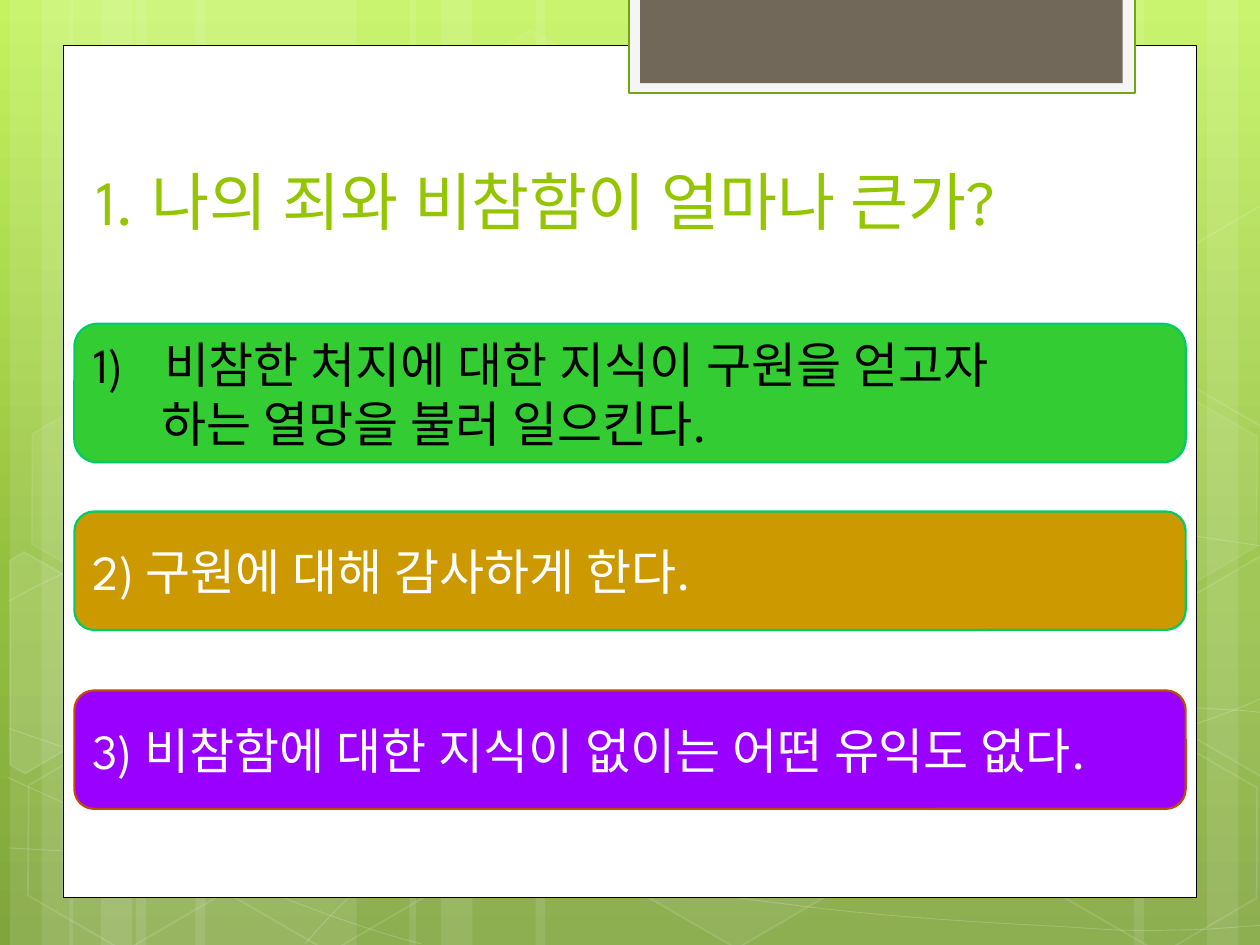
from copy import deepcopy

from pptx import Presentation
from pptx.dml.color import RGBColor
from pptx.enum.shapes import MSO_SHAPE as Preset
from pptx.enum.text import MSO_ANCHOR as Anchor, PP_ALIGN as Align
from pptx.oxml.ns import qn
from pptx.util import Inches, Pt
from lxml.etree import SubElement

COLORS = {
    "sky": "C3F35F", "meadow": "93BF3F", "moss": "81A53E",
    "white": "FFFFFF", "black": "000000", "lime": "94C600",
    "tab": "F5F5F5", "tab edge": "74A510", "tab core": "71685A",
    "green": "33CC33", "mint": "00CC66", "ochre": "CC9900",
    "violet": "9900FF", "rust": "BF4D00",
}
FONT = "League Spartan"

presentation = Presentation()
presentation.slide_width, presentation.slide_height = Inches(10), Inches(7.5)
slide = presentation.slides.add_slide(presentation.slide_layouts[6])
shapes = slide.shapes
CELL = presentation.slide_width // 10  # square grid: 10 columns by 7.5 rows


def paint(shape, fill=None, fill_alpha=100, line=None, width=1, line_alpha=100):
    """Fill and outline a shape; alphas are percentages of opacity."""
    shape.shadow.inherit = False
    shape.line.width = Pt(width)
    properties = shape.element.spPr
    for target, holder, color, alpha in (
            (shape.fill, properties, fill, fill_alpha),
            (shape.line.fill, properties.find(qn("a:ln")), line, line_alpha)):
        if color is None:
            target.background()
            continue
        target.solid()
        target.fore_color.rgb = RGBColor.from_string(COLORS[color])
        if alpha < 100:
            tint = holder.find(qn("a:solidFill"))[0]
            SubElement(tint, qn("a:alpha"), val=str(alpha * 1000))


def outline(points, close):
    """Add a freeform through points measured in grid cells."""
    corners = [(round(x * CELL), round(y * CELL)) for x, y in points]
    builder = shapes.build_freeform(*corners[0])
    builder.add_line_segments(corners[1:], close=close)
    return builder.convert_to_shape()


# Background gradient
background = slide.background.fill
background.gradient()
background.gradient_angle = 270
stop_list = slide.element.find(".//" + qn("a:gsLst"))
stop_list.append(deepcopy(stop_list[-1]))
for stop, color, position in zip(background.gradient_stops,
                                 ("sky", "meadow", "moss"), (0, 0.62, 1)):
    stop.color.rgb = RGBColor.from_string(COLORS[color])
    stop.position = position

# Translucent vertical stripes
for left, width in ((1.08, 1.75), (0.08, 0.5), (0.33, 0.83), (1.55, 1.75),
                    (0.55, 0.5), (0.8, 0.83), (7.33, 1.75), (9.58, 0.5),
                    (9, 0.83), (4.25, 3.08), (3.25, 0.5), (3.5, 0.83)):
    stripe = shapes.add_shape(Preset.RECTANGLE, round(left * CELL), 0,
                              round(width * CELL), presentation.slide_height)
    paint(stripe, "white", 10)

# Sweeping curves: a start point, then cubic segments (two numbers: a straight one)
curves = [
    [(0.07, 6.73), (0.61, 6.76, 1.15, 6.79, 1.9, 6.78), (2.65, 6.77, 3.58, 6.75, 4.58, 6.65),
     (5.58, 6.55, 7, 6.36, 7.92, 6.17), (8.83, 5.98, 9.77, 5.68, 10.07, 5.51)],
    [(0.07, 4.77), (0.36, 4.61, 0.65, 4.46, 1.21, 4.31), (1.78, 4.16, 2.59, 3.94, 3.47, 3.87),
     (4.36, 3.8, 5.44, 3.79, 6.54, 3.87), (7.64, 3.95, 9.47, 4.26, 10.07, 4.34)],
    [(0.06, 6.17), (1.27, 6.72, 2.47, 7.27, 3.34, 7.49)],
    [(0.07, 5.78), (0.38, 5.89, 0.7, 6, 1.28, 6.16), (1.86, 6.31, 2.73, 6.56, 3.57, 6.73),
     (4.4, 6.9, 5.45, 7.08, 6.28, 7.18), (7.11, 7.29, 8, 7.33, 8.53, 7.36),
     (9.05, 7.4, 9.19, 7.38, 9.45, 7.38), (9.71, 7.37, 9.89, 7.35, 10.07, 7.34)],
    [(2.42, 7.49), (2.6, 7.29, 2.78, 7.09, 3.02, 6.91), (3.26, 6.73, 3.6, 6.53, 3.88, 6.39),
     (4.16, 6.25, 4.33, 6.19, 4.7, 6.09), (5.06, 5.99, 5.73, 5.85, 6.08, 5.78),
     (6.44, 5.71, 6.49, 5.71, 6.8, 5.69), (7.11, 5.66, 7.6, 5.63, 7.94, 5.62),
     (8.29, 5.61, 8.86, 5.62, 8.86, 5.62), (9.53, 5.62),
     (9.71, 5.63, 9.88, 5.64, 9.97, 5.65), (10.06, 5.66, 10.03, 5.65, 10.06, 5.66)],
]
for segments in curves:
    numbers = [number for segment in segments for number in segment]
    curve = outline(list(zip(numbers[::2], numbers[1::2])), close=False)
    lines = iter(curve.element.findall(".//" + qn("a:lnTo")))
    for segment in segments[1:]:
        first, *others = [next(lines) for _ in segment[::2]]
        if others:  # merge three straight steps into one cubic step
            cubic = first.makeelement(qn("a:cubicBezTo"))
            first.addprevious(cubic)
            for step in (first, *others):
                cubic.append(step[0])
                step.getparent().remove(step)
    paint(curve, line="white", width=0.5, line_alpha=20)

# Honeycomb: whole hexagons as left, top, fill opacity, line opacity
for left, top, fill_alpha, line_alpha in (
        (3.34, 0.36, 4, 8), (4.97, 5.89, 6, 12), (0.11, 5.91, 0, 12),
        (0.14, 3.12, 7, 8), (1.74, 5.92, 0, 12), (7.53, 4.53, 10, 12),
        (8.34, 5.93, 0, 12), (8.34, 3.14, 7, 8)):
    hexagon = shapes.add_shape(Preset.HEXAGON, round(left * CELL), round(top * CELL),
                               round(1.75 * CELL), round(1.52 * CELL))
    hexagon.adjustments[0], hexagon.adjustments[1] = 0.285, 1.155
    hexagon.rotation = 30
    paint(hexagon, "white" if fill_alpha else None, fill_alpha, "white", 1, line_alpha)

# Honeycomb: hexagons cut off by the slide's edges
for fill_alpha, points in (
        (10, [(0.08, 4.45), (0.19, 4.38), (0.96, 4.82), (0.95, 5.7), (0.2, 6.14), (0.08, 6.07)]),
        (4, [(9.26, 4.85), (10.01, 4.41), (10.09, 4.46), (10.09, 6.13), (10.02, 6.17), (9.26, 5.73)]),
        (0, [(9.26, 2.07), (10.01, 1.63), (10.1, 1.68), (10.09, 3.35), (10.02, 3.39), (9.26, 2.95)])):
    paint(outline(points, close=True), "white" if fill_alpha else None, fill_alpha, "white", 1, 12)

# White page and the tab hanging over its top edge
for left, top, width, height, fill, line, weight in (
        (0.5, 0.36, 9, 6.76, "white", "black", 0.5),
        (4.99, -0.02, 4.02, 0.76, "tab", "tab edge", 1.25),
        (5.08, -0.02, 3.83, 0.68, "tab core", None, 1)):
    panel = shapes.add_shape(Preset.RECTANGLE, round(left * CELL), round(top * CELL),
                             round(width * CELL), round(height * CELL))
    paint(panel, fill, line=line, width=weight)

# Title and the three answer bars
title = shapes.add_textbox(*(round(n * CELL) for n in (0.67, 0.68, 8.58, 1.26)))
texts = [(title, Anchor.BOTTOM, 36, "lime", ["1. 나의 죄와 비참함이 얼마나 큰가?"])]
for top, height, fill, line, color, lines in (
        (2.57, 1.1, "green", "mint", "black",
         ["비참한 처지에 대한 지식이 구원을 얻고자", "하는 열망을 불러 일으킨다."]),
        (4.06, 0.94, "ochre", "mint", "white", ["2) 구원에 대해 감사하게 한다."]),
        (5.48, 0.94, "violet", "rust", "white",
         ["3) 비참함에 대한 지식이 없이는 어떤 유익도 없다."])):
    bar = shapes.add_shape(Preset.ROUNDED_RECTANGLE, round(0.59 * CELL), round(top * CELL),
                           round(8.82 * CELL), round(height * CELL))
    paint(bar, fill, line=line, width=1.25)
    texts.append((bar, Anchor.MIDDLE, 28, color, lines))

for shape, anchor, size, color, lines in texts:
    frame = shape.text_frame
    frame.word_wrap = True
    frame.vertical_anchor = anchor
    for index, line in enumerate(lines):
        paragraph = frame.add_paragraph() if index else frame.paragraphs[0]
        paragraph.alignment = Align.LEFT
        run = paragraph.add_run()
        run.text = line
        run.font.size = Pt(size)
        run.font.color.rgb = RGBColor.from_string(COLORS[color])
        run.font.name = FONT
        SubElement(run._r.get_or_add_rPr(), qn("a:ea"), typeface=FONT)
        if len(lines) > 1:  # numbered first line, the next one sits under its text
            properties = paragraph._p.get_or_add_pPr()
            properties.set("marL", str(round((0.54 if index else 0.56) * CELL)))
            properties.set("indent", str(0 if index else round(-0.56 * CELL)))
            if index == 0:
                SubElement(properties, qn("a:buFont"), typeface=FONT)
                SubElement(properties, qn("a:buAutoNum"), type="arabicParenR")

presentation.save("out.pptx")
